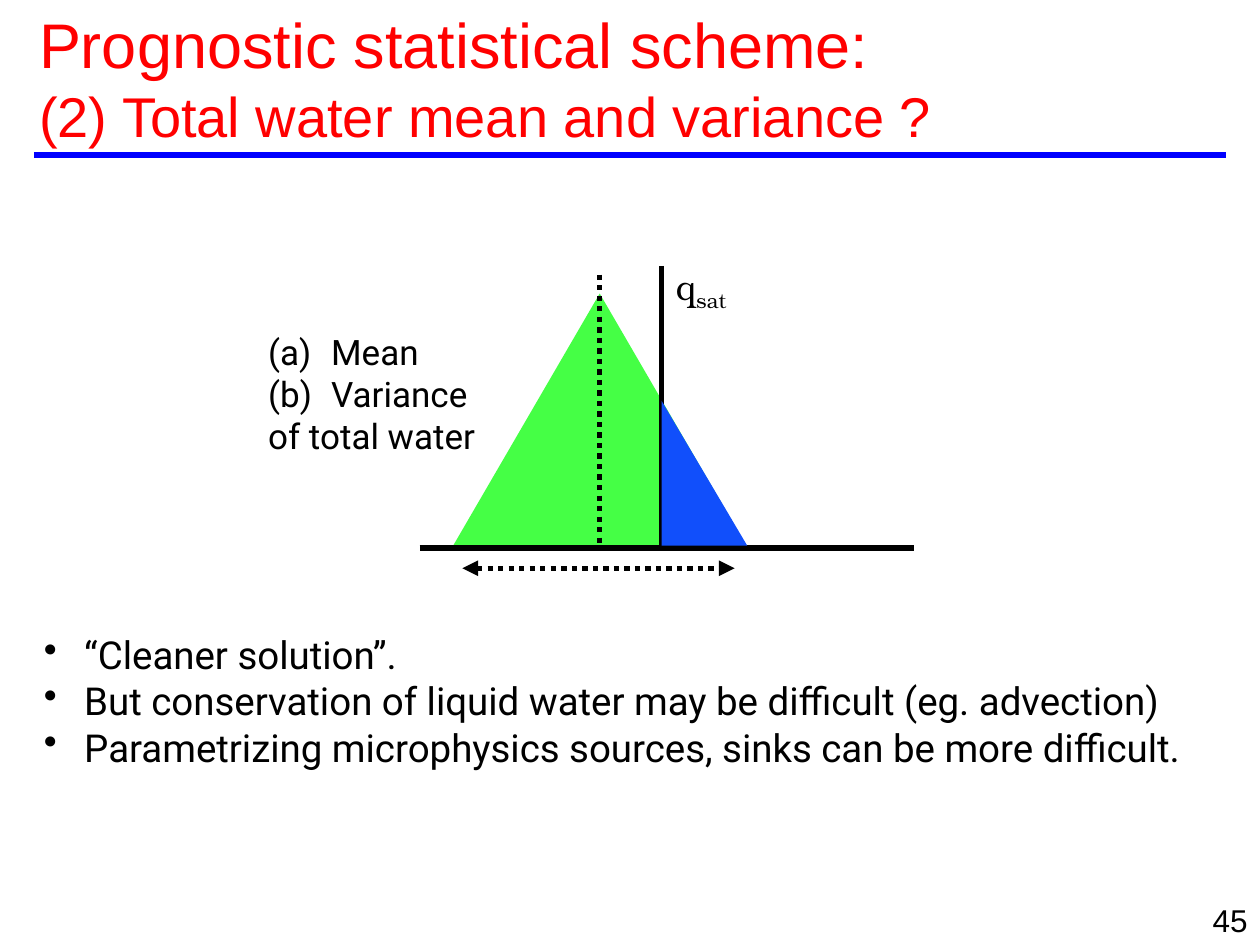
from lxml.etree import SubElement
from pptx import Presentation
from pptx.dml.color import RGBColor
from pptx.enum.dml import MSO_LINE
from pptx.enum.shapes import MSO_CONNECTOR, MSO_SHAPE
from pptx.enum.text import MSO_ANCHOR, MSO_AUTO_SIZE, PP_ALIGN
from pptx.oxml.ns import qn
from pptx.util import Inches, Pt

COLORS = {
    "title": "FF0000",
    "rule": "0000FF",
    "ink": "000000",
    "clear": "45FF45",
    "cloud": "114FFB",
}
COLUMNS, ROWS = 100, 75
SLIDE_WIDTH, SLIDE_HEIGHT = Inches(10), Inches(7.5)
BASELINE, SATURATION, MEAN = 43.5, 52.5, 47.6


def color(name):
    return RGBColor.from_string(COLORS[name])


def across(columns):
    return round(SLIDE_WIDTH * columns / COLUMNS)


def down(rows):
    return round(SLIDE_HEIGHT * rows / ROWS)


def grid_box(left, top, width, height):
    return across(left), down(top), across(width), down(height)


def format_run(run, size, font, ink="ink"):
    run.font.size = Pt(size)
    run.font.name = font
    run.font.color.rgb = color(ink)


def add_title(slide, lines, sizes):
    title = slide.shapes.title
    title.left, title.top, title.width, title.height = grid_box(2.1, 1.5, 80, 9.2)
    frame = title.text_frame
    frame.text = "\v".join(lines)
    frame.auto_size = MSO_AUTO_SIZE.NONE
    frame.vertical_anchor = MSO_ANCHOR.MIDDLE
    paragraph = frame.paragraphs[0]
    paragraph.alignment = PP_ALIGN.LEFT
    for run, size in zip(paragraph.runs, sizes):
        format_run(run, size, "Arial", "title")


def add_text(slide, box, lines, size, font, alignment=PP_ALIGN.LEFT, wrap=True):
    frame = slide.shapes.add_textbox(*grid_box(*box)).text_frame
    frame.word_wrap = wrap
    frame.text = "\n".join(lines)
    for paragraph in frame.paragraphs:
        paragraph.alignment = alignment
        for run in paragraph.runs:
            format_run(run, size, font)
    return frame


def add_marker(paragraph, indent, tag, **attributes):
    properties = paragraph._p.get_or_add_pPr()
    properties.set("marL", str(Inches(indent)))
    properties.set("indent", str(-Inches(indent)))
    SubElement(properties, qn(tag), **attributes)


def add_line(slide, start, end, ink="ink", dotted=False, arrows=False):
    line = slide.shapes.add_connector(
        MSO_CONNECTOR.STRAIGHT,
        across(start[0]), down(start[1]), across(end[0]), down(end[1]),
    )
    line.line.width = Pt(3)
    line.line.color.rgb = color(ink)
    if dotted:
        line.line.dash_style = MSO_LINE.ROUND_DOT
    if arrows:
        for tag in ("a:headEnd", "a:tailEnd"):
            SubElement(line.line._get_or_add_ln(), qn(tag), type="triangle")
    SubElement(line._element.spPr, qn("a:effectLst"))


def add_area(slide, kind, box, fill):
    area = slide.shapes.add_shape(kind, *grid_box(*box))
    area.shadow.inherit = False
    area.fill.solid()
    area.fill.fore_color.rgb = color(fill)
    area.line.fill.background()


def add_distribution(slide):
    add_area(slide, MSO_SHAPE.ISOSCELES_TRIANGLE, (35.8, 23.3, 23.6, 20.3), "clear")
    add_line(slide, (33.3, BASELINE), (72.5, BASELINE))
    add_line(slide, (SATURATION, 21.1), (SATURATION, BASELINE))
    add_line(slide, (MEAN, 21.8), (MEAN, BASELINE), dotted=True)
    label = add_text(slide, (SATURATION, 20.8, 6.3, 4.3), ["q"], 20,
                     "TeX Gyre Bonum", PP_ALIGN.CENTER, wrap=False)
    label.vertical_anchor = MSO_ANCHOR.MIDDLE
    subscript = label.paragraphs[0].add_run()
    subscript.text = "sat"
    format_run(subscript, 20, "TeX Gyre Bonum")
    subscript.font._element.set("baseline", "-25000")
    add_area(slide, MSO_SHAPE.RIGHT_TRIANGLE, (SATURATION, 31.8, 6.8, 11.5), "cloud")
    add_line(slide, (36.7, 45.1), (58.3, 45.1), dotted=True, arrows=True)


def add_moments(slide):
    frame = add_text(slide, (20.3, 25.7, 35.1, 10.9),
                     ["Mean", "Variance", "of total water"], 20, "Roboto")
    for paragraph in frame.paragraphs[:2]:
        add_marker(paragraph, 0.5, "a:buAutoNum", type="alphaLcParenBoth")


def add_remarks(slide):
    frame = add_text(slide, (2.5, 49.6, 96.5, 12.1), [
        "“Cleaner solution”.",
        "But conservation of liquid water may be difficult (eg. advection)",
        "Parametrizing microphysics sources, sinks can be more difficult.",
    ], 22, "Roboto")
    for paragraph in frame.paragraphs:
        add_marker(paragraph, 0.32, "a:buChar", char="•")


def main():
    presentation = Presentation()
    presentation.slide_width, presentation.slide_height = SLIDE_WIDTH, SLIDE_HEIGHT
    slide = presentation.slides.add_slide(presentation.slide_layouts[5])
    add_line(slide, (2.7, 12.3), (97.3, 12.3), "rule")
    add_text(slide, (79.2, 71, 20.8, 5), ["45"], 18, "Arial", PP_ALIGN.RIGHT)
    add_distribution(slide)
    add_moments(slide)
    add_remarks(slide)
    add_title(slide, ["Prognostic statistical scheme:",
                      "(2) Total water mean and variance ?"], (36, 32))
    presentation.save("out.pptx")


if __name__ == "__main__":
    main()
